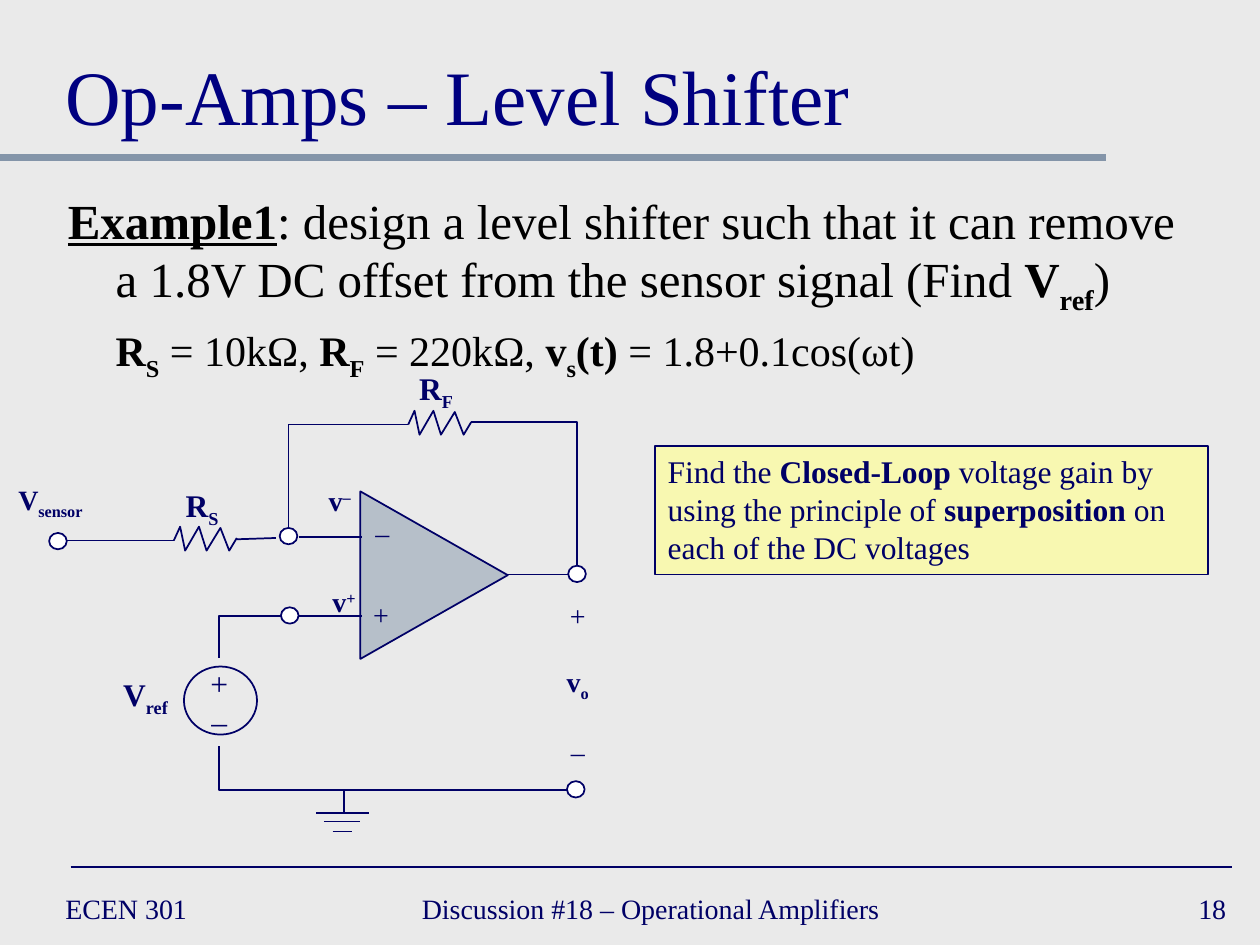
from pptx import Presentation
from pptx.dml.color import RGBColor
from pptx.enum.shapes import MSO_CONNECTOR as Conn, MSO_SHAPE as Shape
from pptx.enum.text import MSO_ANCHOR as Anchor, PP_ALIGN as Align
from pptx.util import Inches, Pt
from lxml.etree import SubElement
from pptx.oxml.ns import qn

NAVY = RGBColor(0x00, 0x00, 0x66)
TITLE_BLUE = RGBColor(0x00, 0x00, 0x80)
BLACK = RGBColor(0, 0, 0)
WHITE = RGBColor(0xFF, 0xFF, 0xFF)
SLATE = RGBColor(0x84, 0x95, 0xA9)
YELLOW = RGBColor(0xFF, 0xFF, 0x99)
GRAY = RGBColor(0xEA, 0xEA, 0xEA)
FONT = "Times New Roman"
BASELINES = {"_": "-25000", "^": "30000"}


def add_runs(p, runs, size=16, color=NAVY, align=Align.LEFT, before=0,
             margin=0, indent=0):
    """Each run is (text, marks): b bold, u underline, _ subscript, ^ superscript."""
    p.alignment = align
    p.space_before = Pt(before)
    if margin:
        pPr = p._p.get_or_add_pPr()
        pPr.set("marL", str(Inches(margin)))
        pPr.set("indent", str(Inches(indent)))
    for text, marks in runs:
        r = p.add_run()
        r.text = text
        r.font.name, r.font.size = FONT, Pt(size)
        r.font.color.rgb = color
        r.font.bold = "b" in marks
        r.font.underline = "u" in marks
        for mark in BASELINES.keys() & set(marks):
            r.font._element.set("baseline", BASELINES[mark])


def add_text(s, box, *paragraphs, anchor=Anchor.TOP, wrap=True, **fmt):
    """Each paragraph is a list of runs, or (runs, own format)."""
    tf = s.shapes.add_textbox(*map(Inches, box)).text_frame
    tf.word_wrap = wrap
    tf.vertical_anchor = anchor
    for i, item in enumerate(paragraphs):
        runs, own = item if isinstance(item, tuple) else (item, {})
        p = tf.add_paragraph() if i else tf.paragraphs[0]
        add_runs(p, runs, **{**fmt, **own})
    return tf


def add_shape(s, kind, box, fill=None, alpha=None):
    sp = s.shapes.add_shape(kind, *map(Inches, box))
    sp.shadow.inherit = False
    sp.line.color.rgb, sp.line.width = NAVY, Pt(1)
    if fill is None:
        sp.fill.background()
    else:
        sp.fill.solid()
        sp.fill.fore_color.rgb = fill
    if alpha:
        clr = sp._element.spPr.find(qn("a:solidFill"))[0]
        SubElement(clr, qn("a:alpha")).set("val", str(alpha * 1000))
    return sp


def add_line(s, start, end, color=NAVY, width=1, elbow=False):
    """An elbow leaves its start horizontally and reaches its end vertically."""
    kind = Conn.ELBOW if elbow else Conn.STRAIGHT
    line = s.shapes.add_connector(kind, *map(Inches, (*start, *end)))
    line.line.color.rgb, line.line.width = color, Pt(width)
    spPr = line._element.spPr
    SubElement(spPr, qn("a:effectLst"))
    if elbow:
        spPr.find(qn("a:prstGeom")).set("prst", "bentConnector2")


def add_resistor(s, x, y):
    """Zigzag from its left end at (x, y)."""
    points = [(0.05, -0.11), (0.09, 0.08), (0.2, -0.11), (0.26, 0.08),
              (0.37, -0.1), (0.44, 0.08), (0.5, -0.02)]
    path = s.shapes.build_freeform(Inches(x), Inches(y))
    path.add_line_segments([(Inches(x + dx), Inches(y + dy)) for dx, dy in points],
                           close=False)
    sp = path.convert_to_shape()
    sp.shadow.inherit = False
    sp.fill.background()
    sp.line.color.rgb, sp.line.width = NAVY, Pt(1)


def add_header(s, x, y, w, h):
    add_line(s, (0, y + 1.08), (8.78, y + 1.08), SLATE, 4)
    add_text(s, (x, y, w, h), [("Op-Amps – Level Shifter", "")],
             size=44, color=TITLE_BLUE, anchor=Anchor.BOTTOM)


def add_footer(s, x, y, w, h):
    add_line(s, (x + 0.14, y - 0.12), (x + w - 0.05, y - 0.12))
    for dx, width, text, align in [
            (0, 2.17, "ECEN 301", Align.LEFT),
            (2.83, 3.83, "Discussion #18 – Operational Amplifiers", Align.LEFT),
            (w - 2.08, 2.08, "18", Align.RIGHT)]:
        add_text(s, (x + dx, y, width, h), [(text, "")],
                 align=align, anchor=Anchor.MIDDLE)


def add_problem(s, box):
    statement = [("Example1", "bu"),
                 (": design a level shifter such that it can remove a 1.8V DC"
                  " offset from the sensor signal (Find ", ""),
                 ("V", "b"), ("ref", "b_"), (")", "")]
    values = [("R", "b"), ("S", "b_"), (" = 10kΩ, ", ""),
              ("R", "b"), ("F", "b_"), (" = 220kΩ, ", ""),
              ("v", "b"), ("s", "b_"), ("(t)", "b"), (" = 1.8+0.1cos(ωt)", "")]
    add_text(s, box, (statement, dict(size=28, indent=-0.38)),
             (values, dict(size=24, before=5)), color=BLACK, margin=0.38)


def add_hint(s, box):
    sp = add_shape(s, Shape.RECTANGLE, box, YELLOW, 70)
    tf = sp.text_frame
    tf.word_wrap = True
    tf.vertical_anchor = Anchor.TOP
    add_runs(tf.paragraphs[0], [
        ("Find the ", ""), ("Closed-Loop", "b"),
        (" voltage gain by using the principle of ", ""),
        ("superposition", "b"), (" on each of the DC voltages", "")], size=18)


def add_circuit(s, x, y):
    def at(px, py):
        return x + px, y + py

    def label(px, py, w, h, *paragraphs, size=16):
        add_text(s, (*at(px, py), w, h), *paragraphs,
                 size=size, align=Align.CENTER, wrap=False)

    # Amplifier
    amp = add_shape(s, Shape.ISOSCELES_TRIANGLE, (*at(2.78, 1.18), 1.33, 1.17),
                    SLATE, 50)
    amp.rotation = 90
    label(2.88, 1.24, 0.31, 0.37, [("–", "")])
    label(2.86, 1.89, 0.33, 0.37, [("+", "")])

    # Resistors
    add_resistor(s, *at(3.24, 0.57))
    add_resistor(s, *at(1.38, 1.49))

    # Reference source
    add_shape(s, Shape.OVAL, (*at(1.46, 2.49), 0.58, 0.54))
    label(1.57, 2.42, 0.34, 0.7, [("+", "")], [("–", "")], size=18)

    # Wires
    for start, end in [((2.87, 2.09), (2.37, 2.09)), ((2.87, 1.46), (2.37, 1.46)),
                       ((4.52, 1.76), (4.02, 1.76)), ((0.53, 1.49), (1.38, 1.49)),
                       ((2.19, 1.47), (1.88, 1.48))]:
        add_line(s, at(*start), at(*end))
    for start, end in [((3.24, 0.57), (2.29, 1.39)), ((3.74, 0.55), (4.58, 1.69)),
                       ((2.23, 2.09), (1.74, 2.42)), ((4.5, 3.47), (1.74, 3.12))]:
        add_line(s, at(*start), at(*end), elbow=True)

    # Ground
    add_line(s, at(2.73, 3.65), at(2.73, 3.47))
    for left, right, py in [(2.51, 2.93, 3.65), (2.57, 2.86, 3.72), (2.64, 2.79, 3.8)]:
        add_line(s, at(left, py), at(right, py))

    # Terminals
    for px, py in [(2.23, 2.02), (2.22, 1.39), (4.51, 1.69), (4.5, 3.4), (0.39, 1.43)]:
        add_shape(s, Shape.OVAL, (*at(px, py), 0.14, 0.13), WHITE)

    # Labels
    for px, py, w, h, name, mark, shift, size in [
            (3.22, 0.08, 0.48, 0.4, "R", "F", "_", 18),
            (1.37, 1.01, 0.47, 0.4, "R", "S", "_", 18),
            (0.86, 2.51, 0.59, 0.4, "V", "ref", "_", 18),
            (0.01, 0.98, 0.78, 0.37, "V", "sensor", "_", 16),
            (2.53, 1.79, 0.4, 0.37, "v", "+", "^", 16),
            (2.5, 0.99, 0.39, 0.37, "v", "–", "^", 16)]:
        label(px, py, w, h, [(name, "b"), (mark, "b" + shift)], size=size)
    gap = dict(before=18.4)
    label(4.39, 1.9, 0.39, 1.44, [("+", "")],
          ([("v", "b"), ("o", "b_")], gap), ([("–", "")], gap))


def main():
    prs = Presentation()
    prs.slide_width, prs.slide_height = Inches(10), Inches(7.5)
    s = prs.slides.add_slide(prs.slide_layouts[6])
    s.background.fill.solid()
    s.background.fill.fore_color.rgb = GRAY
    add_header(s, 0.42, 0.17, 9.17, 1)
    add_footer(s, 0.42, 7, 9.41, 0.42)
    add_problem(s, (0.44, 1.46, 9.14, 1.54))
    add_circuit(s, 0, 2.8)
    add_hint(s, (5.2, 3.54, 4.39, 1.02))
    prs.save("out.pptx")


if __name__ == "__main__":
    main()
